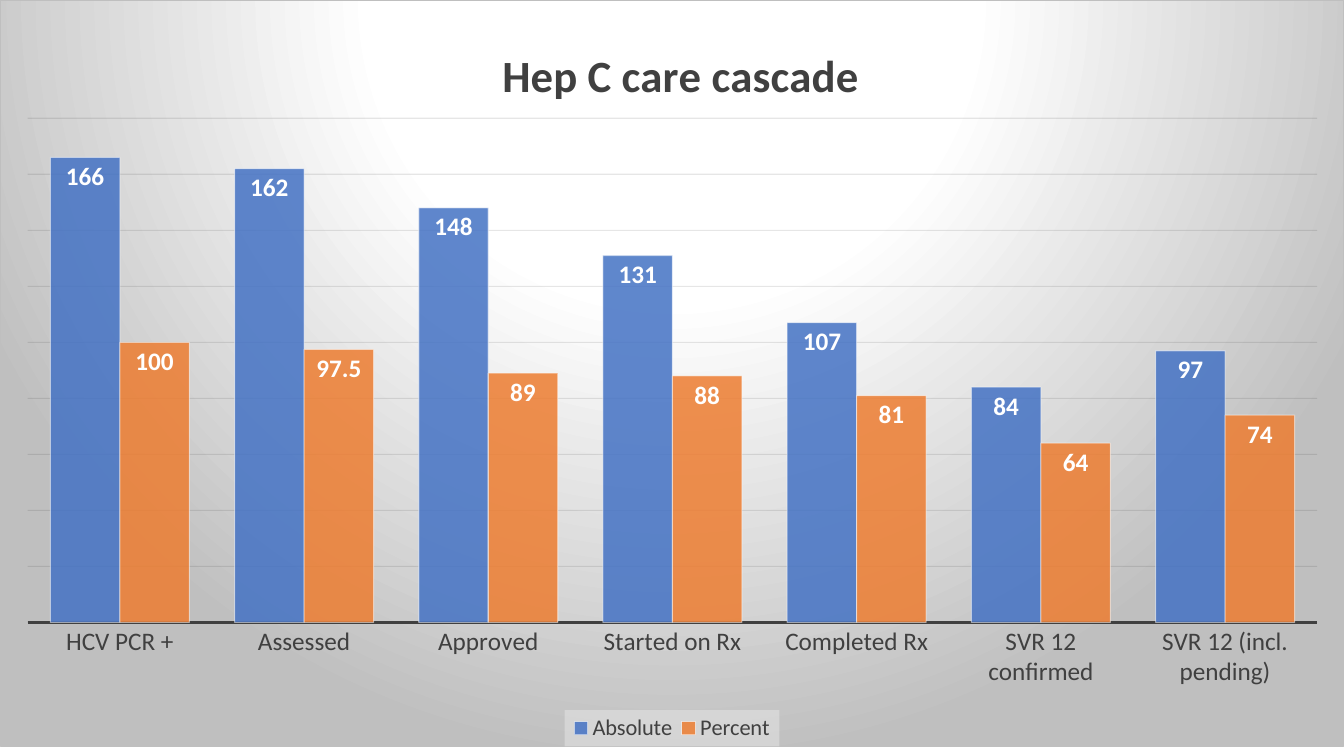
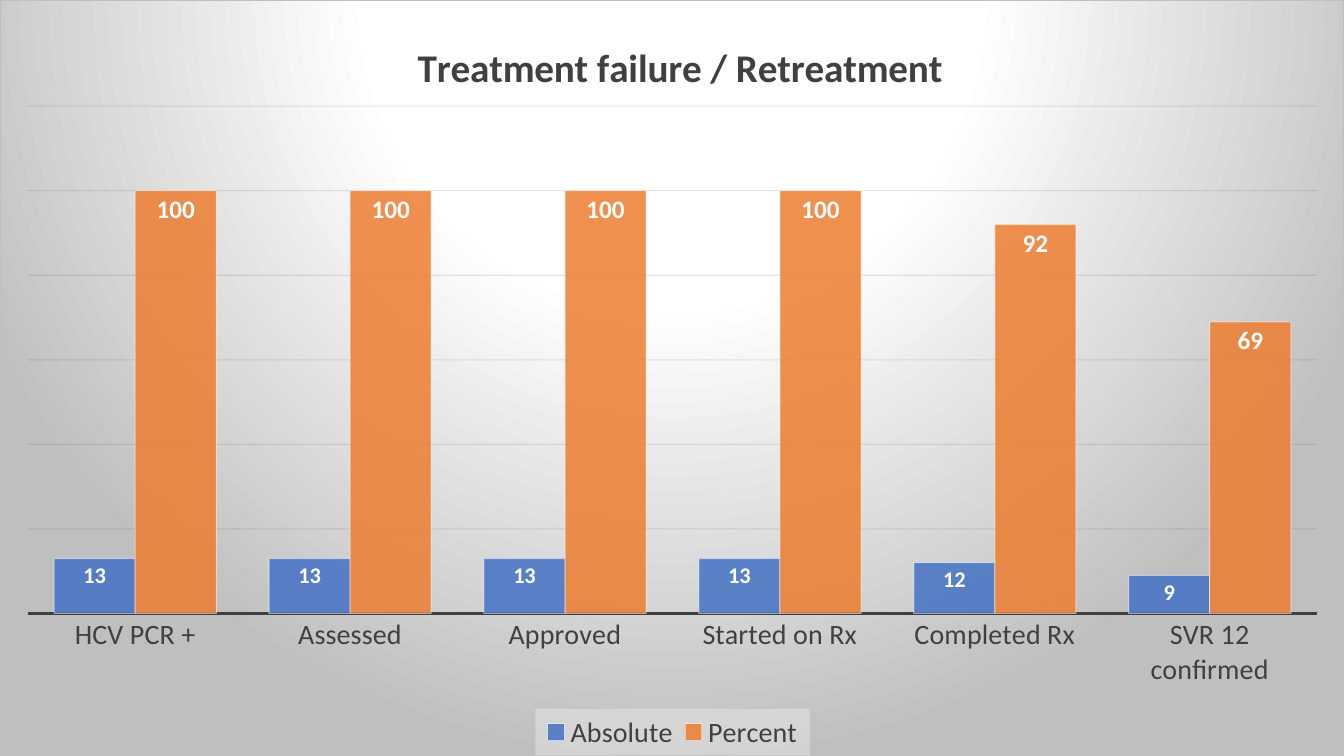
import dataclasses

import pptx
import pptx.chart.data
import pptx.dml.color
import pptx.enum.chart
import pptx.oxml
import pptx.oxml.ns
import pptx.util

Inches = pptx.util.Inches
Pt = pptx.util.Pt
qn = pptx.oxml.ns.qn
chart_enum = pptx.enum.chart


@dataclasses.dataclass(frozen=True)
class Theme:
    font: str = "Calibri"
    black: str = "000000"
    ink: str = "404040"
    paper: str = "FFFFFF"
    edge: str = "BFBFBF"
    grid: str = "0D0D0D"
    legend_back: str = "F2F2F2"
    series_colors: tuple = ("4472C4", "ED7D31")
    base_size: int = 10
    hairline: float = 0.75
    axis_line: float = 1.5


@dataclasses.dataclass(frozen=True)
class Cascade:
    title: str
    stages: tuple
    absolute: tuple
    percent: tuple
    top: float
    scale_max: int
    title_size: int
    stage_size: int
    legend_size: int
    label_sizes: tuple
    height: float
    title_box: tuple
    plot_box: tuple
    legend_box: tuple


THEME = Theme()
WIDTH, HEIGHT = 13.33, 7.5
STAGES = ("HCV PCR +", "Assessed", "Approved", "Started on Rx",
          "Completed Rx", "SVR 12 confirmed")
CASCADES = (
    Cascade(
        title="Hep C care cascade",
        stages=STAGES + ("SVR 12 (incl. pending)",),
        absolute=(166, 162, 148, 131, 107, 84, 97),
        percent=(100, 97.5, 89, 88, 81, 64, 74),
        top=0, height=7.41, scale_max=180,
        title_size=32, stage_size=18, legend_size=16, label_sizes=(18, 18),
        title_box=(4.9, 0.35),
        plot_box=(0.27, 1.17, 12.8, 5.01),
        legend_box=(5.6, 7.05, 2.13, 0.36),
    ),
    Cascade(
        title="Treatment failure / Retreatment",
        stages=STAGES,
        absolute=(13, 13, 13, 13, 12, 9),
        percent=(100, 100, 100, 100, 92, 69),
        top=0, height=7.5, scale_max=120,
        title_size=28, stage_size=20, legend_size=20, label_sizes=(16, 18),
        title_box=(4.07, 0.33),
        plot_box=(0.27, 1.05, 12.8, 5.04),
        legend_box=(5.31, 7.04, 2.72, 0.46),
    ),
)


def rgb(color):
    return pptx.dml.color.RGBColor.from_string(color)


def style_font(font, size, color=THEME.ink, bold=False):
    font.name = THEME.font
    font.size = Pt(size)
    font.bold = bold
    font.color.rgb = rgb(color)


def style_line(line, color, width):
    line.color.rgb = rgb(color)
    line.width = Pt(width)


def chart_xml(tag, content):
    return pptx.oxml.parse_xml(
        f'<c:{tag} {pptx.oxml.ns.nsdecls("c", "a")}>{content}</c:{tag}>')


def set_alpha(chart, query, percent):
    for color in chart.element.xpath(query + "/a:solidFill/a:srgbClr"):
        alpha = color.makeelement(qn("a:alpha"), {"val": str(percent * 1000)})
        color.append(alpha)


def place_part(chart, tag, box, height, inner=False):
    part = chart.element.find(".//" + qn(f"c:{tag}"))
    for layout in part.findall(qn("c:layout")):
        part.remove(layout)
    content = '<c:layoutTarget val="inner"/>' if inner else ""
    content += '<c:xMode val="edge"/><c:yMode val="edge"/>'
    for key, length, whole in zip("xywh", box, (WIDTH, height) * 2):
        content += f'<c:{key} val="{length / whole:.4f}"/>'
    layout = chart_xml("layout", f"<c:manualLayout>{content}</c:manualLayout>")
    overlay = part.find(qn("c:overlay"))
    follower = part[0] if overlay is None else overlay
    follower.addprevious(layout)


def add_backdrop(chart):
    stops = "".join(
        f'<a:gs pos="{position * 1000}"><a:srgbClr val="{color}"/></a:gs>'
        for position, color in ((0, THEME.paper), (39, THEME.paper), (100, THEME.edge)))
    backdrop = chart_xml("spPr", (
        f'<a:gradFill><a:gsLst>{stops}</a:gsLst><a:path path="circle">'
        '<a:fillToRect l="50000" t="-80000" r="50000" b="180000"/></a:path></a:gradFill>'
        f'<a:ln w="{Pt(THEME.hairline)}"><a:solidFill>'
        f'<a:srgbClr val="{THEME.edge}"/></a:solidFill></a:ln>'))
    chart.element.find(qn("c:txPr")).addprevious(backdrop)


def format_title(chart, cascade):
    chart.has_title = True
    heading = chart.chart_title.text_frame.paragraphs[0].add_run()
    heading.text = cascade.title
    style_font(heading.font, cascade.title_size, bold=True)
    chart.chart_title.include_in_layout = False
    place_part(chart, "title", cascade.title_box, cascade.height)


def format_axes(chart, cascade):
    stages = chart.category_axis
    stages.major_tick_mark = chart_enum.XL_TICK_MARK.NONE
    style_font(stages.tick_labels.font, cascade.stage_size)
    style_line(stages.format.line, THEME.ink, THEME.axis_line)
    scale = chart.value_axis
    scale.minimum_scale, scale.maximum_scale = 0, cascade.scale_max
    scale.major_unit = 20
    scale.has_major_gridlines = True
    style_line(scale.major_gridlines.format.line, THEME.grid, THEME.hairline)
    scale.visible = False
    set_alpha(chart, ".//c:majorGridlines/c:spPr/a:ln", 10)
    place_part(chart, "plotArea", cascade.plot_box, cascade.height, inner=True)


def format_columns(chart, cascade):
    columns = chart.plots[0]
    columns.gap_width = 65
    columns.overlap = 0
    columns.vary_by_categories = False
    for measure, color, size in zip(columns.series, THEME.series_colors,
                                    cascade.label_sizes):
        measure.invert_if_negative = False
        measure.format.fill.solid()
        measure.format.fill.fore_color.rgb = rgb(color)
        style_line(measure.format.line, THEME.paper, THEME.hairline)
        labels = measure.data_labels
        labels.show_value = True
        labels.position = chart_enum.XL_LABEL_POSITION.INSIDE_END
        style_font(labels.font, size, THEME.paper, bold=True)
    set_alpha(chart, ".//c:ser/c:spPr", 85)
    set_alpha(chart, ".//c:ser/c:spPr/a:ln", 50)


def format_legend(chart, cascade):
    chart.has_legend = True
    legend = chart.legend
    legend.position = chart_enum.XL_LEGEND_POSITION.BOTTOM
    legend.include_in_layout = False
    style_font(legend.font, cascade.legend_size)
    panel = chart_xml("spPr", (
        f'<a:solidFill><a:srgbClr val="{THEME.legend_back}">'
        '<a:alpha val="39000"/></a:srgbClr></a:solidFill>'))
    chart.element.find(".//" + qn("c:legend")).find(qn("c:txPr")).addprevious(panel)
    place_part(chart, "legend", cascade.legend_box, cascade.height)


def add_cascade_slide(deck, cascade):
    slide = deck.slides.add_slide(deck.slide_layouts[6])
    figures = pptx.chart.data.CategoryChartData()
    figures.categories = cascade.stages
    figures.add_series("Absolute", cascade.absolute)
    figures.add_series("Percent", cascade.percent)
    chart = slide.shapes.add_chart(
        chart_enum.XL_CHART_TYPE.COLUMN_CLUSTERED, Inches(0), Inches(cascade.top),
        Inches(WIDTH), Inches(cascade.height), figures).chart
    style_font(chart.font, THEME.base_size, THEME.black)
    add_backdrop(chart)
    format_title(chart, cascade)
    format_axes(chart, cascade)
    format_columns(chart, cascade)
    format_legend(chart, cascade)


def main():
    deck = pptx.Presentation()
    deck.slide_width, deck.slide_height = Inches(WIDTH), Inches(HEIGHT)
    for cascade in CASCADES:
        add_cascade_slide(deck, cascade)
    deck.save("out.pptx")


if __name__ == "__main__":
    main()
